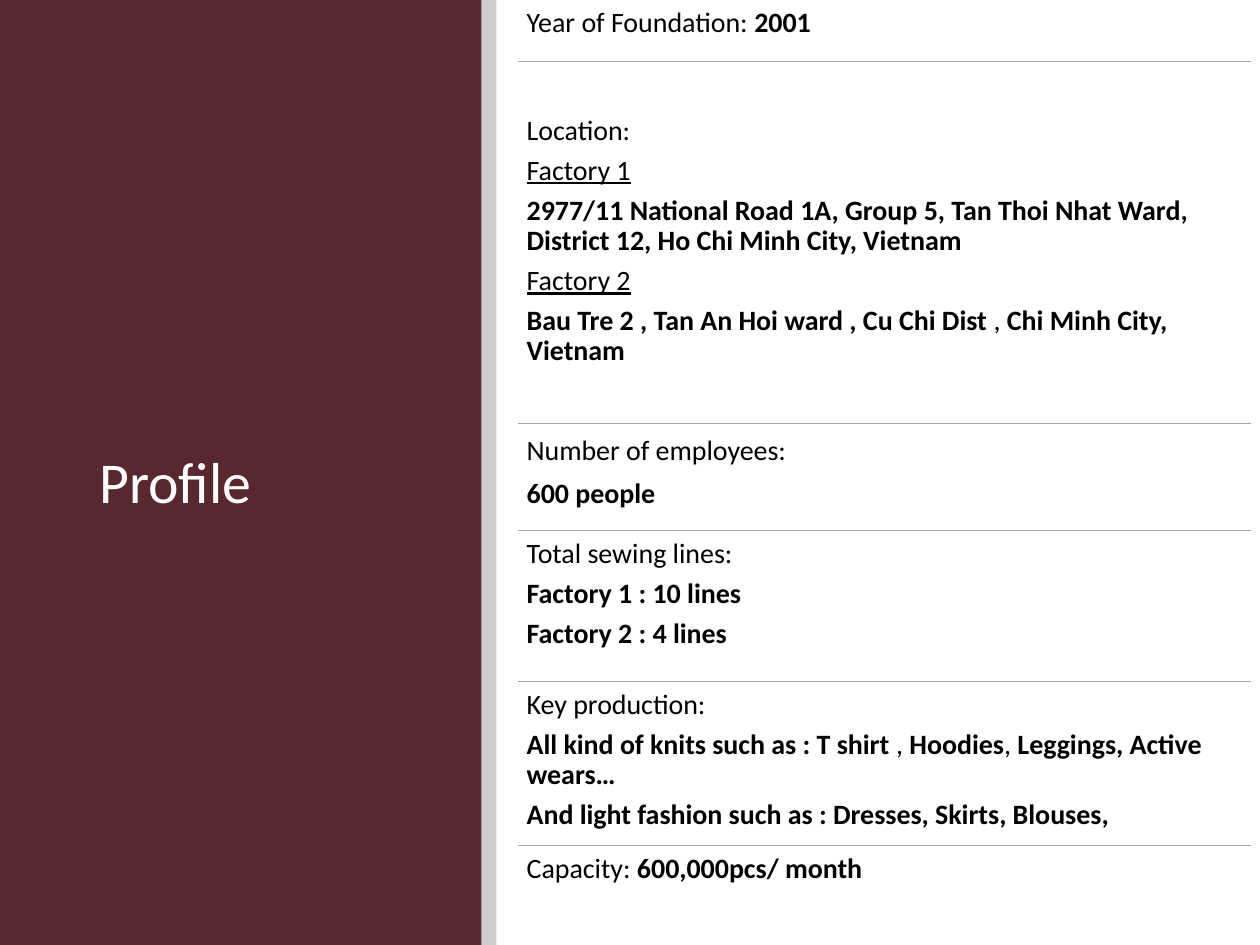
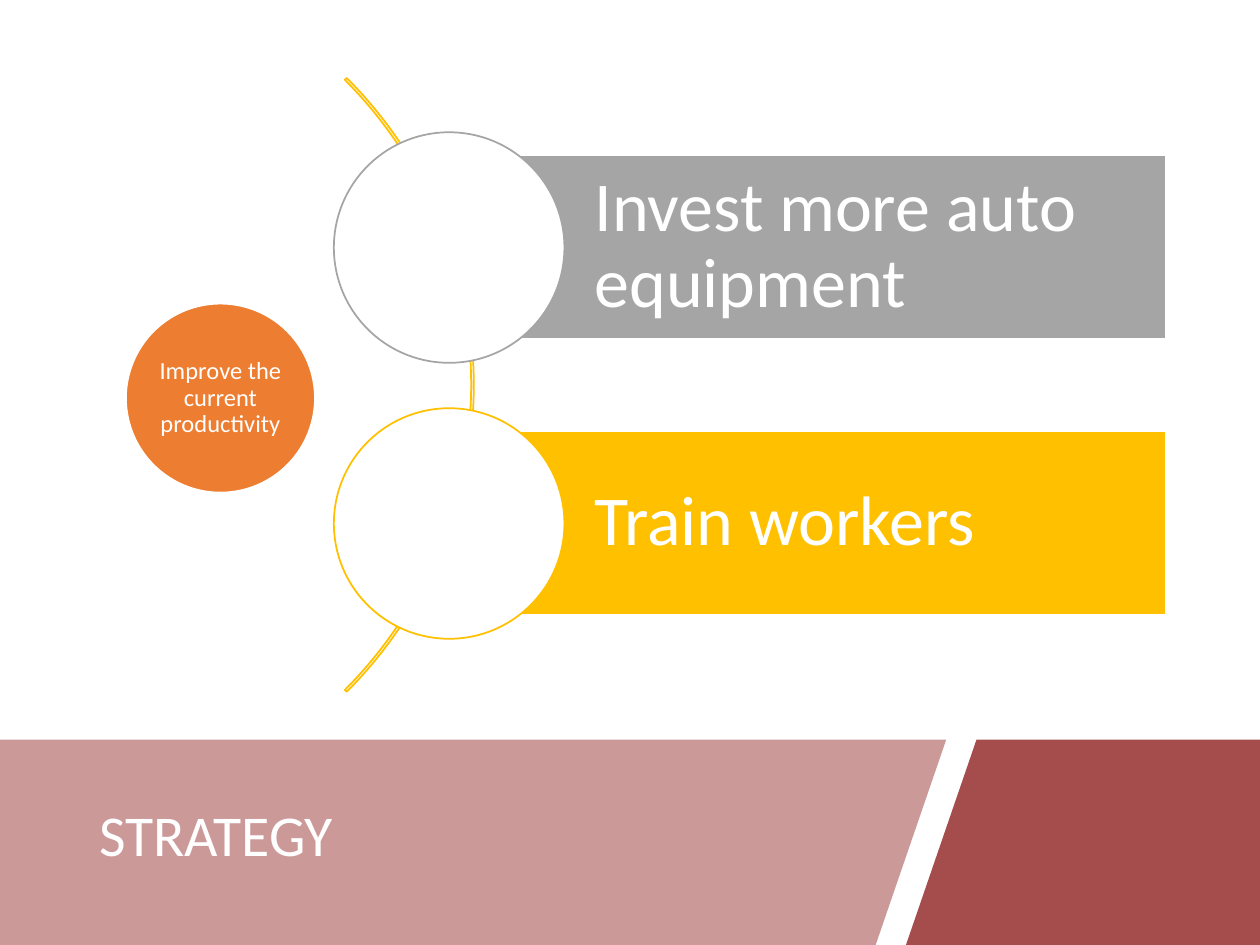
from lxml.etree import SubElement
from pptx import Presentation
from pptx.dml.color import RGBColor
from pptx.enum.shapes import MSO_CONNECTOR, MSO_SHAPE as Preset
from pptx.enum.text import MSO_ANCHOR as Anchor, PP_ALIGN as Align
from pptx.oxml.ns import qn
from pptx.util import Pt

SCALE = 9144  # EMU per px, 100 px to the inch
FONT = "Calibri"
WHITE, BLACK, GREY = "FFFFFF", "000000", "A5A5A5"
WINE, MAROON, AMBER, ORANGE = "58282E", "800000", "FFC000", "ED7D31"


def color(hex_string):
    return RGBColor.from_string(hex_string)


class Deck:
    """Holds the shared style and the slide being built."""

    def __init__(self, width, height):
        self.presentation = Presentation()
        self.presentation.slide_width = width * SCALE
        self.presentation.slide_height = height * SCALE
        self.slide = None

    def new_slide(self):
        self.slide = self.presentation.slides.add_slide(self.presentation.slide_layouts[6])

    def paint(self, shape, fill, line, alpha):
        shape.shadow.inherit = False
        if fill:
            shape.fill.solid()
            shape.fill.fore_color.rgb = color(fill)
            if alpha < 100:
                solid = shape._element.spPr.find(qn("a:solidFill"))
                SubElement(solid[0], qn("a:alpha"), val=str(alpha * 1000))
        else:
            shape.fill.background()
        if line:
            shape.line.color.rgb = color(line)
            shape.line.width = Pt(1)
        else:
            shape.line.fill.background()
        return shape

    def shape(self, preset, box, fill=None, line=None, alpha=100):
        shape = self.slide.shapes.add_shape(preset, *(value * SCALE for value in box))
        return self.paint(shape, fill, line, alpha)

    def outline(self, points, fill, alpha):
        builder = self.slide.shapes.build_freeform(*points[0], scale=SCALE)
        builder.add_line_segments(points[1:], close=True)
        return self.paint(builder.convert_to_shape(), fill, None, alpha)

    def divider(self, left, right, y):
        line = self.slide.shapes.add_connector(
            MSO_CONNECTOR.STRAIGHT, left * SCALE, y * SCALE, right * SCALE, y * SCALE)
        line.line.color.rgb = color(GREY)
        line.line.width = Pt(0.5)
        SubElement(line._element.spPr, qn("a:effectLst"))

    def fill_text(self, shape, paragraphs, size, ink=WHITE, insets=(10, 5, 10, 5),
                  anchor=Anchor.MIDDLE, align=Align.LEFT, spacing=0.9, after=0.35):
        """Each paragraph is a list of (text, style); style holds b or u."""
        frame = shape.text_frame
        frame.word_wrap = True
        frame.vertical_anchor = anchor
        (frame.margin_left, frame.margin_top,
         frame.margin_right, frame.margin_bottom) = (value * SCALE for value in insets)
        for index, runs in enumerate(paragraphs):
            paragraph = frame.add_paragraph() if index else frame.paragraphs[0]
            paragraph.alignment = align
            paragraph.line_spacing = spacing
            paragraph.space_after = Pt(size * after)
            for text, style in runs:
                run = paragraph.add_run()
                run.text = text
                run.font.name = FONT
                run.font.size = Pt(size)
                run.font.color.rgb = color(ink)
                run.font.bold = "b" in style
                run.font.underline = "u" in style

    def text(self, box, paragraphs, size, **style):
        textbox = self.slide.shapes.add_textbox(*(value * SCALE for value in box))
        self.fill_text(textbox, paragraphs, size, **style)

    def title(self, box, text):
        self.text(box, [[(text, "")]], 33, after=0)


# Top, height, line spacing and paragraphs of each fact
FACTS = [
    (0, 85, 0.9, [[("Year of Foundation: ", ""), ("2001", "b")]]),
    (85, 251, 0.9, [
        [("Location:", "")],
        [("Factory 1", "u")],
        [("2977/11 National Road 1A, Group 5, Tan Thoi Nhat Ward, "
          "District 12, Ho Chi Minh City, Vietnam", "b")],
        [("Factory 2", "u")],
        [("Bau Tre 2 , Tan An Hoi ward , Cu Chi Dist ", "b"), (", ", ""),
         ("Chi Minh City, Vietnam", "b")]]),
    (336, 85, 1.0, [[("Number of employees:", "")], [("600 people", "b")]]),
    (421, 120, 0.9, [
        [("Total sewing lines:", "")],
        [("Factory 1 : 10 lines", "b")],
        [("Factory 2 : 4 lines", "b")]]),
    (541, 130, 0.9, [
        [("Key production:", "")],
        [("All kind of knits such as : T shirt ", "b"), (", ", ""), ("Hoodies", "b"),
         (", ", ""), ("Leggings, Active wears…", "b")],
        [("And light fashion such as : Dresses, Skirts, Blouses,", "b")]]),
    (671, 61, 0.9, [[("Capacity: ", ""), ("600,000pcs/ month", "b")]]),
]


def build_profile(deck):
    deck.new_slide()
    # Title panel
    deck.shape(Preset.RECTANGLE, (0, 0, 382, 750), WINE)
    deck.title((69, 89, 274, 591), "Profile")
    # Facts, with a divider between neighbours
    left, width = 411, 582
    for top, height, spacing, paragraphs in FACTS:
        deck.text((left, top, width, height), paragraphs, 16, ink=BLACK,
                  insets=(7, 7, 7, 7), anchor=Anchor.TOP, spacing=spacing)
    for y in [49] + [fact[0] for fact in FACTS[2:]]:
        deck.divider(left, left + width, y)
    # Strip beside the panel
    deck.shape(Preset.RECTANGLE, (382, 0, 12, 750), BLACK, alpha=20)


def build_strategy(deck):
    deck.new_slide()
    # Title band
    deck.outline([(0, 587), (751, 587), (695, 750), (0, 750)], MAROON, 40)
    deck.outline([(775, 587), (1000, 587), (1000, 750), (719, 750)], MAROON, 70)
    deck.title((69, 605, 633, 120), "STRATEGY")
    # Arc behind the actions
    arc = deck.shape(Preset.BLOCK_ARC, (-313, -39, 689, 689), line=AMBER)
    for index, value in enumerate((189, 27, 0.003)):
        arc.adjustments[index] = value
    # Actions: a bar with a circle at its left end
    actions = [("Invest more auto equipment", GREY), ("Train workers", AMBER)]
    for index, (action, accent) in enumerate(actions):
        top = 123 + index * 219
        bar = deck.shape(Preset.RECTANGLE, (356, top, 569, 146), accent, WHITE)
        deck.fill_text(bar, [[(action, "")]], 40, insets=(116, 11, 11, 11))
        deck.shape(Preset.OVAL, (265, top - 18, 183, 183), WHITE, accent)
    # Goal
    goal = deck.shape(Preset.OVAL, (100, 241, 150, 150), ORANGE, WHITE)
    deck.fill_text(goal, [[("Improve the current productivity", "")]], 14,
                   insets=(2, 2, 2, 2), align=Align.CENTER)


def main():
    deck = Deck(1000, 750)
    build_profile(deck)
    build_strategy(deck)
    deck.presentation.save("out.pptx")


if __name__ == "__main__":
    main()
